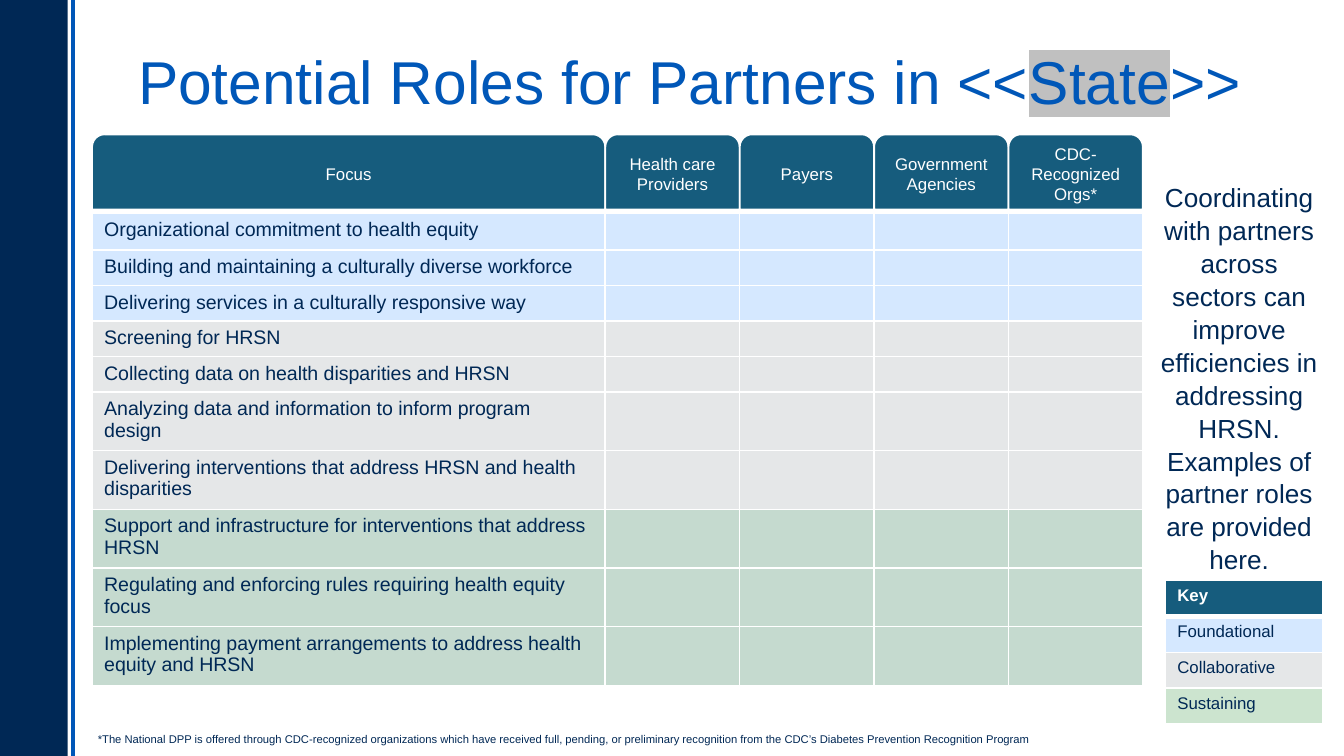
"""Build the slide on partner roles: a focus table, a side note and a colour key."""
from lxml import etree
from pptx import Presentation
from pptx import util as u
from pptx.dml.color import RGBColor
from pptx.enum import shapes, text
from pptx.oxml import ns

COLORS = {
    "navy": "002855", "blue": "0057B8", "teal": "165C7D", "white": "FFFFFF",
    "foundational": "D5E8FF", "collaborative": "E5E7E8", "sustaining": "C5DACF",
    "key green": "CCE4CF", "highlight": "C0C0C0",
}


def add_run(paragraph, words, size, color, bold=False):
    run = paragraph.add_run()
    run.text = words
    run.font.name = "Arial"
    run.font.size = u.Pt(size)
    run.font.bold = bold
    run.font.color.rgb = RGBColor.from_string(COLORS[color])
    return run


def style_cell(cell, fill, bottom=1):
    cell.margin_left = cell.margin_right = u.Cm(0.23)
    cell.margin_top = cell.margin_bottom = u.Cm(0.11)
    cell.fill.solid()
    cell.fill.fore_color.rgb = RGBColor.from_string(COLORS[fill])
    properties = cell._tc.get_or_add_tcPr()
    for index, (side, points) in enumerate([("L", 1), ("R", 1), ("T", 1), ("B", bottom)]):
        border = etree.Element(ns.qn(f"a:ln{side}"), w=str(u.Pt(points)))
        solid = etree.SubElement(border, ns.qn("a:solidFill"))
        etree.SubElement(solid, ns.qn("a:srgbClr"), val=COLORS["white"])
        properties.insert(index, border)


presentation = Presentation()
presentation.slide_width = u.Cm(25.4)
presentation.slide_height = u.Cm(14.29)
slide = presentation.slides.add_slide(presentation.slide_layouts[6])

stripe = slide.shapes.add_connector(
    shapes.MSO_CONNECTOR.STRAIGHT, u.Cm(1.38), u.Cm(14.29), u.Cm(1.38), u.Cm(0))
stripe.line.width = u.Pt(2.25)
stripe.line.color.rgb = RGBColor.from_string(COLORS["blue"])
etree.SubElement(stripe._element.spPr, ns.qn("a:effectLst"))

side_bar = slide.shapes.add_shape(
    shapes.MSO_SHAPE.RECTANGLE, u.Cm(0), u.Cm(0), u.Cm(1.28), u.Cm(14.29))
side_bar.shadow.inherit = False
side_bar.fill.solid()
side_bar.fill.fore_color.rgb = RGBColor.from_string(COLORS["navy"])
side_bar.line.fill.background()

title = slide.shapes.add_textbox(u.Cm(2.36), u.Cm(0.53), u.Cm(21.77), u.Cm(1.8))
title.text_frame.word_wrap = True
title.text_frame.vertical_anchor = text.MSO_ANCHOR.BOTTOM
paragraph = title.text_frame.paragraphs[0]
add_run(paragraph, "Potential Roles for Partners in <<", 32.4, "blue")
state = add_run(paragraph, "State", 32.4, "blue")
highlight = etree.Element(ns.qn("a:highlight"))
etree.SubElement(highlight, ns.qn("a:srgbClr"), val=COLORS["highlight"])
state._r.rPr.find(ns.qn("a:solidFill")).addnext(highlight)
add_run(paragraph, ">>", 32.4, "blue")

table_left = 1.74
column_widths = [9.7] + [2.54] * 4
focus_rows = [
    ("Organizational commitment to health equity", "foundational", 0.7),
    ("Building and maintaining a culturally diverse workforce", "foundational", 0.67),
    ("Delivering services in a culturally responsive way", "foundational", 0.67),
    ("Screening for HRSN", "collaborative", 0.67),
    ("Collecting data on health disparities and HRSN", "collaborative", 0.67),
    ("Analyzing data and information to inform program design", "collaborative", 1.08),
    ("Delivering interventions that address HRSN and health disparities", "collaborative", 1.08),
    ("Support and infrastructure for interventions that address HRSN", "sustaining", 1.08),
    ("Regulating and enforcing rules requiring health equity focus", "sustaining", 1.08),
    ("Implementing payment arrangements to address health equity and HRSN", "sustaining", 1.08),
]
focus_frame = slide.shapes.add_table(
    len(focus_rows), len(column_widths), u.Cm(table_left), u.Cm(4.03),
    u.Cm(sum(column_widths)), u.Cm(sum(height for _, _, height in focus_rows)))
focus_table = focus_frame.table
focus_table.first_row = focus_table.horz_banding = False
for column, width in zip(focus_table.columns, column_widths):
    column.width = u.Cm(width)
for row, (focus, fill, height) in zip(focus_table.rows, focus_rows):
    row.height = u.Cm(height)
    for index, cell in enumerate(row.cells):
        style_cell(cell, fill)
        paragraph = cell.text_frame.paragraphs[0]
        if index == 0:
            add_run(paragraph, focus, 10.5, "navy")
        else:
            etree.SubElement(paragraph._p, ns.qn("a:endParaRPr"), sz="1050")

headings = ["Focus", "Health care Providers", "Payers", "Government Agencies",
            "CDC-Recognized Orgs*"]
header_group = slide.shapes.add_group_shape()
left = table_left
for heading, width in zip(headings, column_widths):
    header = header_group.shapes.add_shape(
        shapes.MSO_SHAPE.ROUND_2_SAME_RECTANGLE, u.Cm(left), u.Cm(2.54), u.Cm(width), u.Cm(1.42))
    header.shadow.inherit = False
    header.fill.solid()
    header.fill.fore_color.rgb = RGBColor.from_string(COLORS["teal"])
    header.line.color.rgb = RGBColor.from_string(COLORS["white"])
    header.line.width = u.Pt(1)
    header.text_frame.word_wrap = True
    header.text_frame.vertical_anchor = text.MSO_ANCHOR.MIDDLE
    paragraph = header.text_frame.paragraphs[0]
    paragraph.alignment = text.PP_ALIGN.CENTER
    add_run(paragraph, heading, 9, "white")
    left += width

note = slide.shapes.add_textbox(u.Cm(21.64), u.Cm(3.28), u.Cm(3.56), u.Cm(7.44))
note.text_frame.word_wrap = True
note.text_frame.auto_size = text.MSO_AUTO_SIZE.SHAPE_TO_FIT_TEXT
paragraph = note.text_frame.paragraphs[0]
paragraph.alignment = text.PP_ALIGN.CENTER
paragraph.line_spacing = 1.05
add_run(paragraph, "Coordinating with partners across sectors can improve efficiencies in "
        "addressing HRSN. Examples of partner roles are provided here.", 14, "navy")

key_rows = [("Key", "teal"), ("Foundational", "foundational"),
            ("Collaborative", "collaborative"), ("Sustaining", "key green")]
key_frame = slide.shapes.add_table(
    len(key_rows), 1, u.Cm(22.02), u.Cm(10.97), u.Cm(2.97), u.Cm(2.72))
key_table = key_frame.table
key_table.horz_banding = False
for index, (label, fill) in enumerate(key_rows):
    is_heading = index == 0
    key_table.rows[index].height = u.Cm(0.68)
    cell = key_table.cell(index, 0)
    style_cell(cell, fill, bottom=3 if is_heading else 1)
    add_run(cell.text_frame.paragraphs[0], label, 9,
            "white" if is_heading else "navy", bold=is_heading)

footnote = slide.shapes.add_textbox(u.Cm(1.6), u.Cm(13.72), u.Cm(23.57), u.Cm(0.5))
footnote.text_frame.word_wrap = True
footnote.text_frame.auto_size = text.MSO_AUTO_SIZE.SHAPE_TO_FIT_TEXT
add_run(footnote.text_frame.paragraphs[0],
        "*The National DPP is offered through CDC-recognized organizations which have received "
        "full, pending, or preliminary recognition from the CDC’s Diabetes Prevention "
        "Recognition Program", 6, "navy")

presentation.save("out.pptx")
